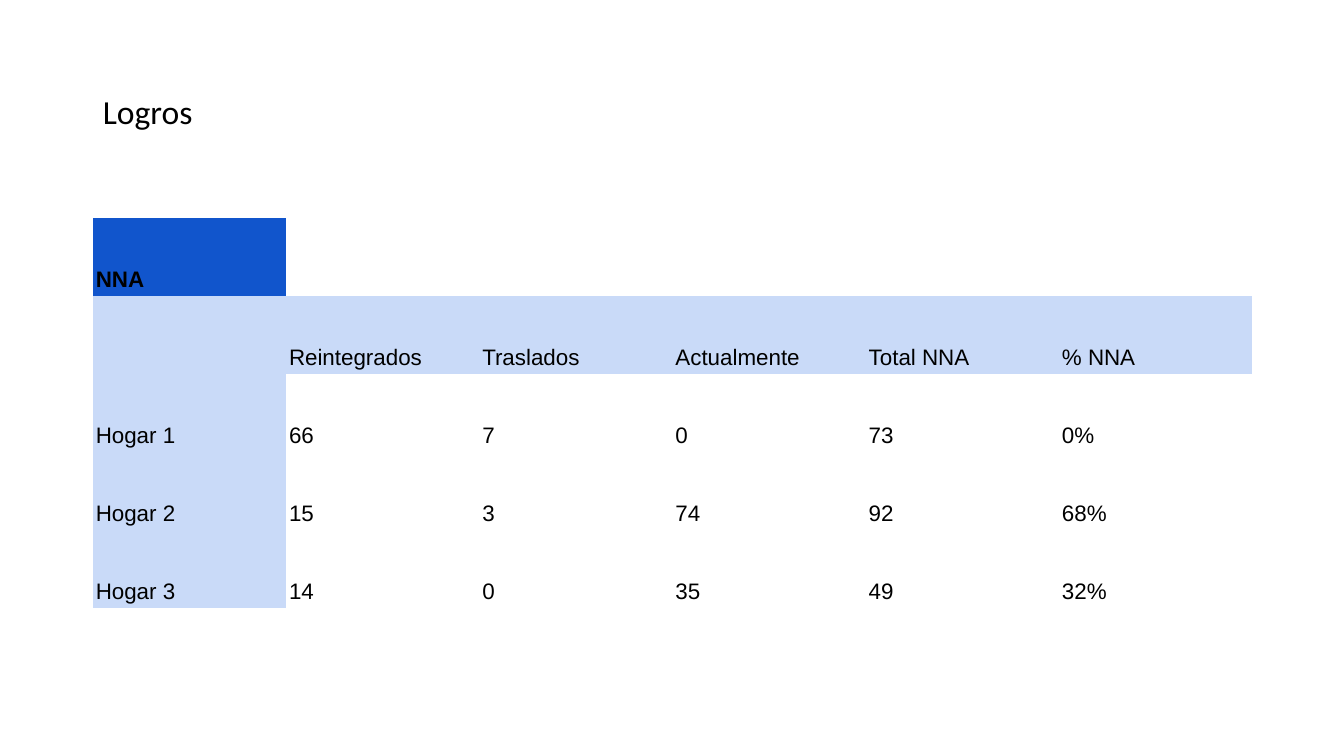
import pptx
import pptx.util
import pptx.dml.color
import pptx.enum.text
import pptx.oxml.ns
from dataclasses import dataclass

TITLE = "Logros"
ROWS = [
    ("NNA", "", "", "", "", ""),
    ("", "Reintegrados", "Traslados", "Actualmente", "Total NNA", "% NNA"),
    ("Hogar 1", "66", "7", "0", "73", "0%"),
    ("Hogar 2", "15", "3", "74", "92", "68%"),
    ("Hogar 3", "14", "0", "35", "49", "32%"),
]


@dataclass
class Theme:
    ink: str = "000000"
    dark: str = "1155CC"
    light: str = "C9DAF8"
    head: str = "Calibri"
    body: str = "Arial"
    head_size: int = 24
    body_size: int = 16


theme = Theme()
PLAIN_STYLE = "{2D5ABB26-0587-4C30-8999-92F81FD0307C}"
Inches, Pt = pptx.util.Inches, pptx.util.Pt
Align, Anchor = pptx.enum.text.PP_ALIGN, pptx.enum.text.MSO_ANCHOR
WIDTH, HEIGHT = 13.33, 7.5
LEFT, SPAN = 0.92, 11.5
TOP, ROW = 2.16, 0.774


def color(code):
    return pptx.dml.color.RGBColor.from_string(code)


def write(para, text, face, size, bold=False):
    run = para.add_run()
    run.text = text
    run.font.name = face
    run.font.size = Pt(size)
    run.font.bold = bold
    run.font.color.rgb = color(theme.ink)


def shade(row, col):
    """Return the fill of a cell: dark corner, light header row and column."""
    if row == 0:
        return theme.dark if col == 0 else None
    return theme.light if row == 1 or col == 0 else None


def add_title(slide):
    title = slide.shapes.title
    title.left, title.top = Inches(LEFT), Inches(0.4)
    title.width, title.height = Inches(SPAN), Inches(1.45)
    title.text_frame.vertical_anchor = Anchor.MIDDLE
    para = title.text_frame.paragraphs[0]
    para.alignment = Align.LEFT
    para.line_spacing = 0.9
    write(para, TITLE, theme.head, theme.head_size)


def fill_cell(cell, text, row, col):
    cell.vertical_anchor = Anchor.BOTTOM
    cell.margin_left = cell.margin_right = Inches(0.03)
    cell.margin_top = cell.margin_bottom = Inches(0.03)
    tint = shade(row, col)
    if tint:
        cell.fill.solid()
        cell.fill.fore_color.rgb = color(tint)
    else:
        cell.fill.background()
    if text:
        para = cell.text_frame.paragraphs[0]
        para.alignment = Align.JUSTIFY
        para.line_spacing = 1.15
        para.space_after = Pt(8)
        write(para, text, theme.body, theme.body_size, bold=row == 0)


def add_grid(slide):
    count = len(ROWS)
    frame = slide.shapes.add_table(
        count, len(ROWS[0]), Inches(LEFT), Inches(TOP),
        Inches(SPAN), Inches(ROW * count))
    for style in frame.element.iter(pptx.oxml.ns.qn("a:tableStyleId")):
        style.text = PLAIN_STYLE
    table = frame.table
    table.first_row = table.horz_banding = False
    for row, texts in enumerate(ROWS):
        for col, text in enumerate(texts):
            fill_cell(table.cell(row, col), text, row, col)


def main():
    deck = pptx.Presentation()
    deck.slide_width, deck.slide_height = Inches(WIDTH), Inches(HEIGHT)
    slide = deck.slides.add_slide(deck.slide_layouts.get_by_name("Title Only"))
    add_title(slide)
    add_grid(slide)
    deck.save("out.pptx")


if __name__ == "__main__":
    main()
